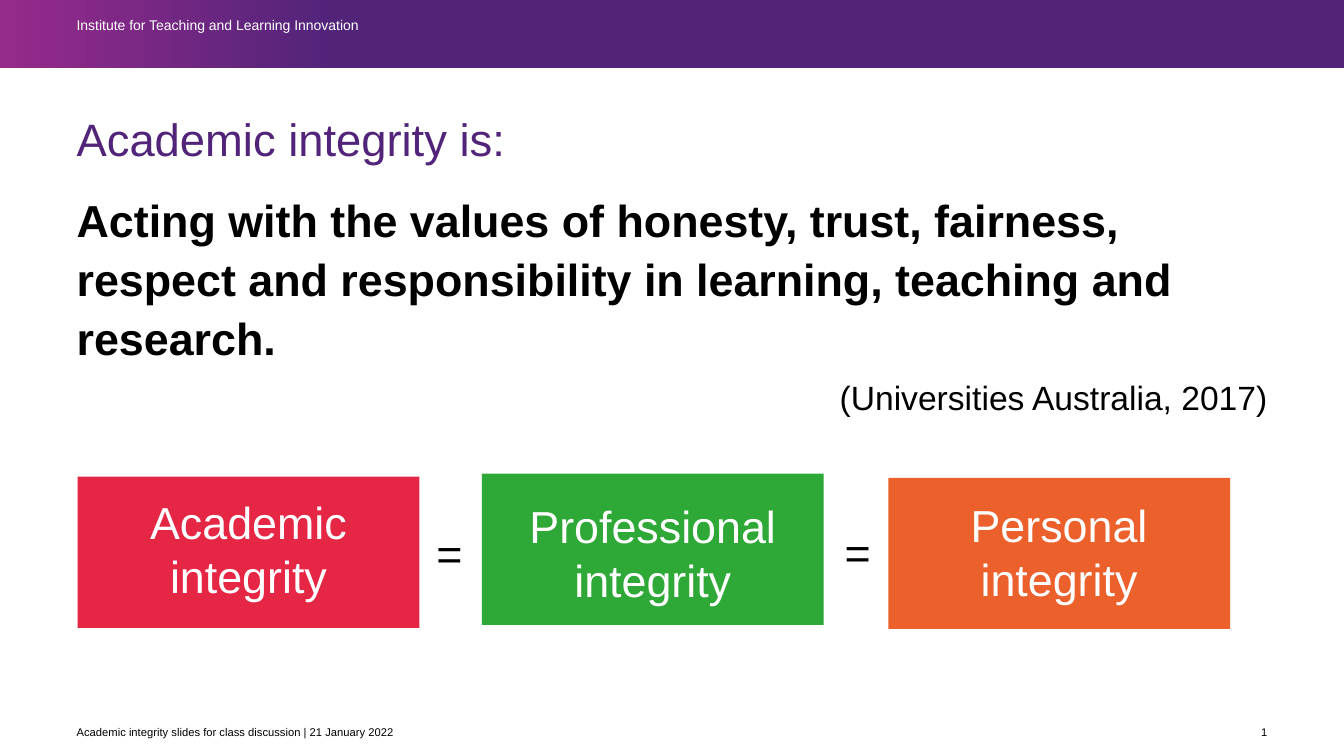
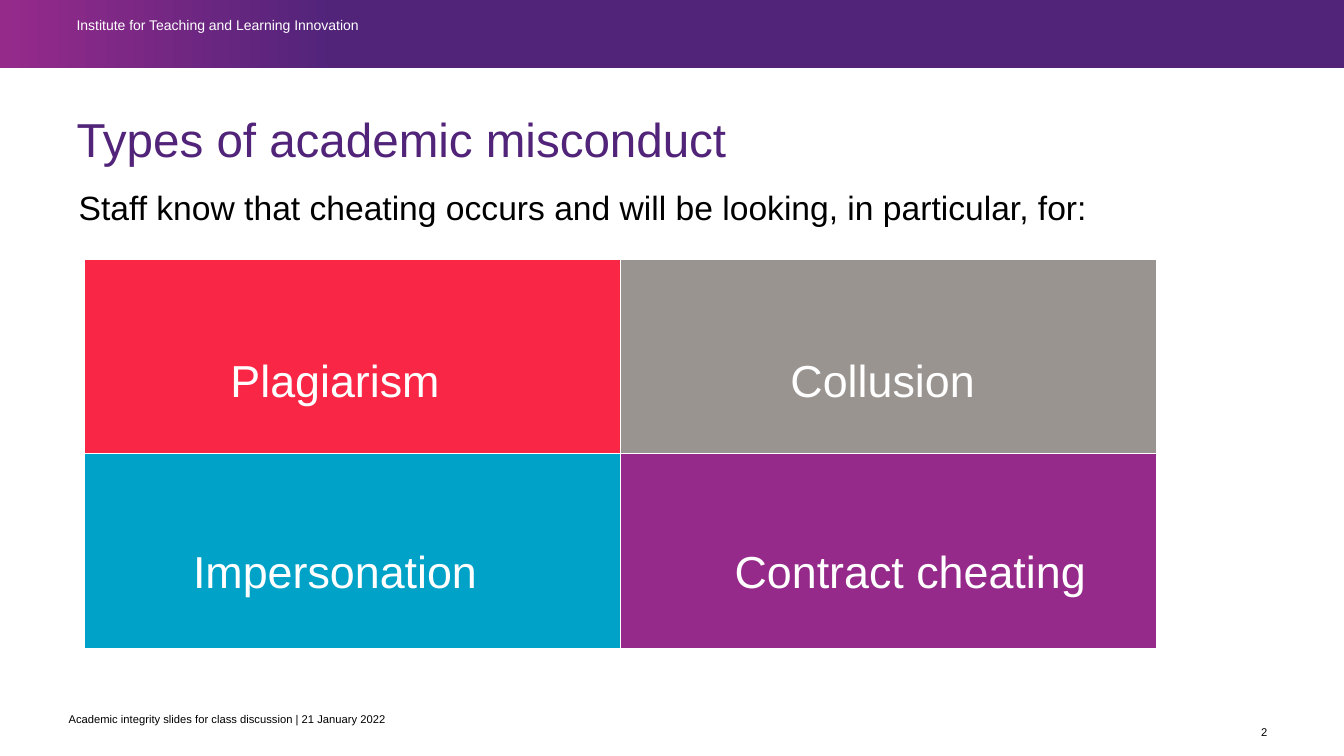
"""Build two slides on academic integrity and types of misconduct."""
import copy

import pptx
import pptx.dml.color
import pptx.enum.shapes
import pptx.enum.text
import pptx.oxml
import pptx.oxml.ns
import pptx.util
from lxml import etree

Inches = pptx.util.Inches
Pt = pptx.util.Pt
ALIGN = pptx.enum.text.PP_ALIGN
ANCHOR = pptx.enum.text.MSO_ANCHOR
RECTANGLE = pptx.enum.shapes.MSO_SHAPE.RECTANGLE
qn = pptx.oxml.ns.qn

FONT = "Arial"
COLORS = {
    "purple": "51247A", "magenta": "962A8B", "black": "000000", "white": "FFFFFF",
    "crimson": "E62645", "green": "2EA836", "orange": "EB602B",
    "red": "FA2645", "grey": "999490", "blue": "00A2C7",
}
SLIDE_WIDTH, SLIDE_HEIGHT = 13.33, 7.5
MARGIN, CONTENT_WIDTH = 0.76, 11.81
BOX_INSETS = (0.1, 0.05, 0.1, 0.05)
HEADER = "Institute for Teaching and Learning Innovation"
FOOTER = "Academic integrity slides for class discussion | 21 January 2022"

DEFINITION = {
    "title": "Academic integrity is:", "title_size": 32.4, "footer_at": (MARGIN, 7.13),
    "text": "Acting with the values of honesty, trust, fairness, respect and "
            "responsibility in learning, teaching and research.",
    "source": "(Universities Australia, 2017)",
}
CARDS = [
    {"text": "Academic integrity", "color": "crimson", "at": (0.77, 4.73), "inset": 0.18},
    {"text": "Professional integrity", "color": "green", "at": (4.78, 4.7), "inset": 0.25},
    {"text": "Personal integrity", "color": "orange", "at": (8.81, 4.74), "inset": 0.2},
]
CARD_SIZE = (3.39, 1.5)
EQUALS_SIGNS = [(4.23, 5.17), (8.28, 5.16)]

MISCONDUCT = {
    "title": "Types of academic misconduct", "title_size": 34, "footer_at": (0.68, 7),
    "text": "Staff know that cheating occurs and will be looking, in particular, for:",
}
TYPES = [
    {"text": "Plagiarism", "at": (1.71, 3.18, 3.23, 0.91)},
    {"text": "Collusion", "at": (7.14, 3.18, 3.23, 0.91)},
    {"text": "Impersonation", "at": (1.71, 5.08, 3.23, 0.91)},
    {"text": "Contract cheating", "at": (7.14, 5.08, 3.78, 0.91)},
]
TABLE_COLORS = [["red", "grey"], ["blue", "magenta"]]
TABLE_AT = (0.84, 2.57, 10.63, 3.86)


def rgb(name):
    return pptx.dml.color.RGBColor.from_string(COLORS[name])


def set_margins(frame, left=0, top=0, right=0, bottom=0):
    frame.margin_left, frame.margin_top = Inches(left), Inches(top)
    frame.margin_right, frame.margin_bottom = Inches(right), Inches(bottom)


def format_paragraph(paragraph, size, color="black", align=ALIGN.LEFT, spacing=None, bold=False):
    paragraph.alignment = align
    if spacing:
        paragraph.line_spacing = spacing
    for run in paragraph.runs:
        run.font.name, run.font.size, run.font.bold = FONT, Pt(size), bold
        run.font.color.rgb = rgb(color)


def add_text(slide, place, text, size, anchor=ANCHOR.TOP, insets=(), **style):
    box = slide.shapes.add_textbox(*map(Inches, place))
    frame = box.text_frame
    frame.word_wrap, frame.vertical_anchor = True, anchor
    set_margins(frame, *insets)
    frame.text = text
    format_paragraph(frame.paragraphs[0], size, **style)
    return frame


def add_rectangle(slide, place):
    shape = slide.shapes.add_shape(RECTANGLE, *map(Inches, place))
    shape.shadow.inherit = False
    shape.line.fill.background()
    return shape


def move_band_to_layout(slide):
    band = add_rectangle(slide, (0, 0, SLIDE_WIDTH, 0.68))
    band.fill.gradient()
    band.fill.gradient_angle = 0
    stops = zip(band.fill.gradient_stops, (("magenta", 0), ("purple", 0.25)))
    for stop, (color, position) in stops:
        stop.color.rgb, stop.position = rgb(color), position
    slide.slide_layout.shapes.element.append(band.element)


def add_page_number(slide, number):
    frame = add_text(slide, (12.26, 7.13, 0.31, 0.26), str(number), 8,
                     anchor=ANCHOR.MIDDLE, align=ALIGN.RIGHT)
    run = frame.paragraphs[0].runs[0]._r
    field = etree.Element(qn("a:fld"), type="slidenum",
                          id="{B6F15528-21DE-4FAA-801E-634DDDAF4B2B}")
    for part in run:
        field.append(copy.deepcopy(part))
    run.getparent().replace(run, field)


def add_slide(presentation, content):
    slide = presentation.slides.add_slide(presentation.slide_layouts[5])
    title = slide.shapes.title
    title.left, title.top = Inches(MARGIN), Inches(1.15)
    title.width, title.height = Inches(CONTENT_WIDTH), Inches(0.51)
    frame = title.text_frame
    frame.text = content["title"]
    frame.auto_size = pptx.enum.text.MSO_AUTO_SIZE.NONE
    frame.word_wrap, frame.vertical_anchor = True, ANCHOR.MIDDLE
    set_margins(frame)
    format_paragraph(frame.paragraphs[0], content["title_size"], "purple", spacing=0.9)
    add_text(slide, (MARGIN, 0.2, 3.7, 0.26), HEADER, 10, color="white", spacing=0.8)
    add_text(slide, (*content["footer_at"], 3.67, 0.26), FOOTER, 8, anchor=ANCHOR.MIDDLE)
    add_page_number(slide, len(presentation.slides))
    return slide


def add_cards(slide):
    for card in CARDS:
        shape = add_rectangle(slide, card["at"] + CARD_SIZE)
        shape.fill.solid()
        shape.fill.fore_color.rgb = rgb(card["color"])
        frame = shape.text_frame
        frame.word_wrap, frame.vertical_anchor = True, ANCHOR.TOP
        set_margins(frame, 0.26, card["inset"], 0.26)
        frame.text = card["text"]
        format_paragraph(frame.paragraphs[0], 32, "white", ALIGN.CENTER)
    for place in EQUALS_SIGNS:
        add_text(slide, (*place, 0.47, 0.64), "=", 32, insets=BOX_INSETS)


def set_borders(cell):
    properties = cell._tc.get_or_add_tcPr()
    for position, side in enumerate(("lnL", "lnR", "lnT", "lnB")):
        line = etree.Element(qn(f"a:{side}"), w=str(Pt(1)))
        fill = etree.SubElement(line, qn("a:solidFill"))
        etree.SubElement(fill, qn("a:srgbClr"), val=COLORS["white"])
        properties.insert(position, line)


def add_types_table(slide):
    rows, columns = len(TABLE_COLORS), len(TABLE_COLORS[0])
    table = slide.shapes.add_table(rows, columns, *map(Inches, TABLE_AT)).table
    table.first_row = table.horz_banding = False
    for row, colors in enumerate(TABLE_COLORS):
        for column, color in enumerate(colors):
            cell = table.cell(row, column)
            cell.fill.solid()
            cell.fill.fore_color.rgb = rgb(color)
            set_borders(cell)
    for kind in TYPES:
        add_text(slide, kind["at"], kind["text"], 32, insets=BOX_INSETS,
                 color="white", align=ALIGN.CENTER, spacing=1.5)


def main():
    presentation = pptx.Presentation()
    presentation.slide_width = Inches(SLIDE_WIDTH)
    presentation.slide_height = Inches(SLIDE_HEIGHT)

    slide = add_slide(presentation, DEFINITION)
    move_band_to_layout(slide)
    frame = add_text(slide, (MARGIN, 1.86, CONTENT_WIDTH, 2.4), DEFINITION["text"], 32,
                     spacing=1.1, bold=True)
    frame.paragraphs[0].space_after = Pt(6)
    source = frame.add_paragraph()
    source.text = DEFINITION["source"]
    format_paragraph(source, 24, align=ALIGN.RIGHT, spacing=1.1)
    add_cards(slide)

    slide = add_slide(presentation, MISCONDUCT)
    add_text(slide, (0.78, 1.81, CONTENT_WIDTH, 0.6), MISCONDUCT["text"], 24, spacing=1.1)
    add_types_table(slide)

    presentation.save("out.pptx")


if __name__ == "__main__":
    main()
